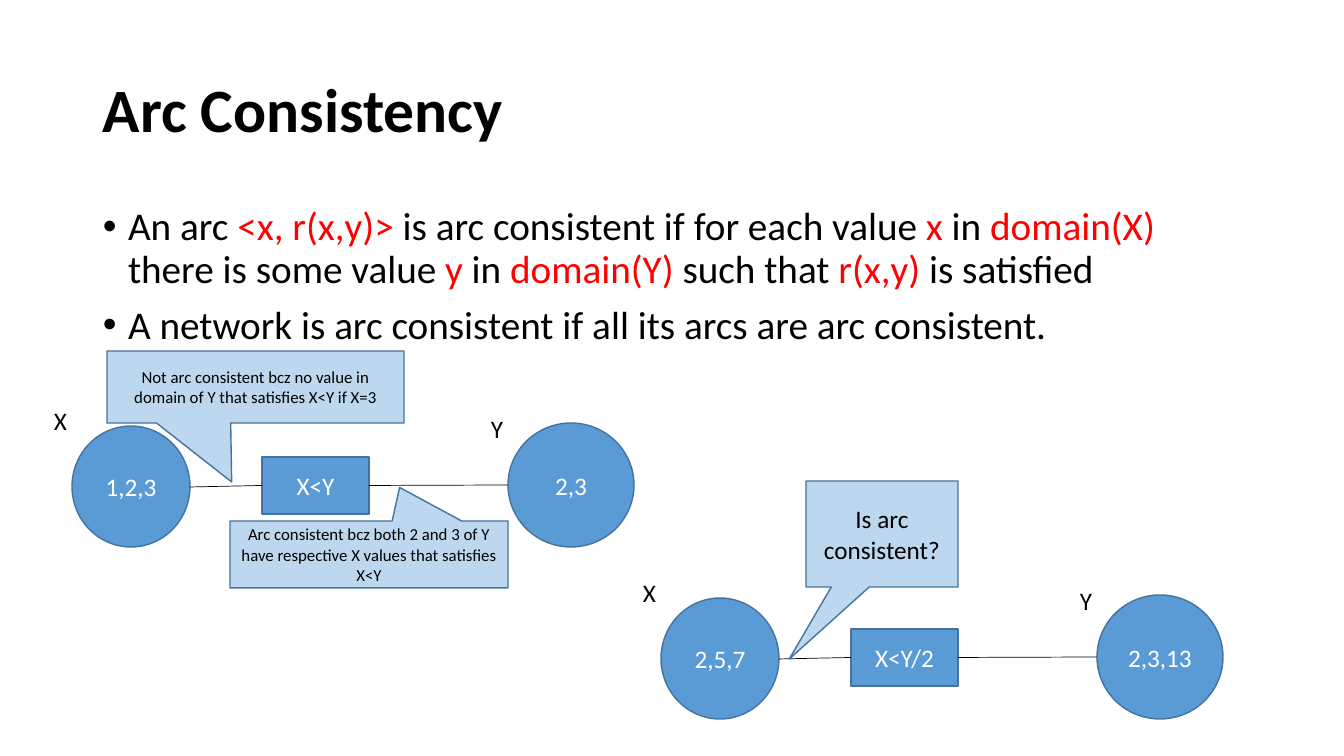
from lxml.etree import SubElement
from pptx import Presentation
from pptx.dml.color import RGBColor
from pptx.enum.shapes import MSO_CONNECTOR as Connector, MSO_SHAPE as Shape
from pptx.enum.text import MSO_ANCHOR as Anchor, PP_ALIGN as Align
from pptx.oxml.ns import qn
from pptx.util import Pt

PX = 12192000 / 1344  # EMU in one px
BLACK, WHITE, RED = "000000", "FFFFFF", "FF0000"
BLUE, PALE_BLUE, OUTLINE = "5B9BD5", "BDD7EE", "43739E"
LEFT, RIGHT = 1, 3  # connection sites of a rectangle


def px(length):
    return round(length * PX)


def colour(value):
    return RGBColor.from_string(value)


class SlideBuilder:
    font = "Calibri"

    def __init__(self, slide):
        self.slide = slide

    def add_runs(self, para, runs, size, bold=False):
        for text, ink in runs:
            span = para.add_run()
            span.text = text
            span.font.name = self.font
            span.font.size = Pt(size)
            span.font.bold = bold
            span.font.color.rgb = colour(ink)

    def text(self, area, paragraphs, size, bold=False, anchor=Anchor.TOP,
             spacing=1.0, before=0, bullet=False):
        box = self.slide.shapes.add_textbox(*map(px, area))
        frame = box.text_frame
        frame.word_wrap = True
        frame.vertical_anchor = anchor
        for index, runs in enumerate(paragraphs):
            para = frame.add_paragraph() if index else frame.paragraphs[0]
            para.line_spacing = spacing
            para.space_before = Pt(before)
            if bullet:
                self.bullet(para)
            self.add_runs(para, runs, size, bold)

    def bullet(self, para):
        properties = para._p.get_or_add_pPr()
        properties.set("marL", "228600")
        properties.set("indent", "-228600")
        SubElement(properties, qn("a:buFont")).set("typeface", "Arial")
        SubElement(properties, qn("a:buChar")).set("char", "•")

    def shape(self, kind, area, text, fill=BLUE, ink=WHITE, size=18):
        shape = self.slide.shapes.add_shape(kind, *map(px, area))
        shape.shadow.inherit = False
        shape.fill.solid()
        shape.fill.fore_color.rgb = colour(fill)
        shape.line.color.rgb = colour(OUTLINE)
        shape.line.width = Pt(1)
        frame = shape.text_frame
        frame.word_wrap = True
        frame.vertical_anchor = Anchor.MIDDLE
        para = frame.paragraphs[0]
        para.alignment = Align.CENTER
        self.add_runs(para, [(text, ink)], size)
        return shape

    def callout(self, area, text, tip, size):
        shape = self.shape(Shape.RECTANGULAR_CALLOUT, area, text, PALE_BLUE, BLACK, size)
        shape.adjustments[0], shape.adjustments[1] = tip

    def arc(self, x, y, constraint, site):
        """Line from a point on a variable's circle to a side of the constraint."""
        line = self.slide.shapes.add_connector(
            Connector.STRAIGHT, px(x), px(y), px(x), px(y))
        line.end_connect(constraint, site)
        line.line.color.rgb = colour(BLACK)
        line.line.width = Pt(0.5)
        SubElement(line._element.spPr, qn("a:effectLst"))

    def network(self, x, y, x_domain, relation, y_domain):
        """Two variables joined by a constraint; x, y is the corner of the X label."""
        self.shape(Shape.OVAL, (x + 28, y + 26, 118, 121), x_domain)
        self.shape(Shape.OVAL, (x + 464, y + 23, 126, 124), y_domain)
        constraint = self.shape(Shape.RECTANGLE, (x + 218, y + 57, 107, 57), relation)
        self.arc(x + 146, y + 87, constraint, LEFT)
        self.arc(x + 464, y + 85, constraint, RIGHT)
        self.text((x, y, 41, 40), [[("X", BLACK)]], 18)
        self.text((x + 437, y + 8, 54, 40), [[("Y", BLACK)]], 18)


def main():
    deck = Presentation()
    deck.slide_width, deck.slide_height = px(1344), px(756)
    page = SlideBuilder(deck.slides.add_slide(deck.slide_layouts[6]))

    # Title and definitions
    page.text((93, 40, 1159, 146), [[("Arc Consistency", BLACK)]], 44,
              bold=True, anchor=Anchor.MIDDLE, spacing=0.9)
    definitions = [
        [("An arc ", BLACK), ("<x, r(x,y)> ", RED),
         ("is arc consistent if for each value ", BLACK), ("x", RED),
         (" in ", BLACK), ("domain(X)", RED),
         (" there is some value ", BLACK), ("y", RED),
         (" in ", BLACK), ("domain(Y)", RED),
         (" such that ", BLACK), ("r(x,y)", RED), (" is satisfied", BLACK)],
        [("A network is arc consistent if all its arcs are arc consistent.", BLACK)],
    ]
    page.text((93, 202, 1159, 480), definitions, 28,
              spacing=0.9, before=10, bullet=True)

    # Example networks
    page.network(44, 400, "1,2,3", "X<Y", "2,3")
    page.network(633, 572, "2,5,7", "X<Y/2", "2,3,13")

    # Remarks on the arcs
    page.callout((107, 351, 297, 72),
                 "Not arc consistent bcz no value in domain of Y that satisfies X<Y if X=3",
                 (-0.08, 1.32), 12)
    page.callout((230, 521, 278, 67),
                 "Arc consistent bcz both 2 and 3 of Y have respective X values that satisfies X<Y",
                 (0.11, -1), 12)
    page.callout((806, 481, 152, 106), "Is arc consistent?", (-0.61, 1.18), 18)

    deck.save("out.pptx")


if __name__ == "__main__":
    main()
